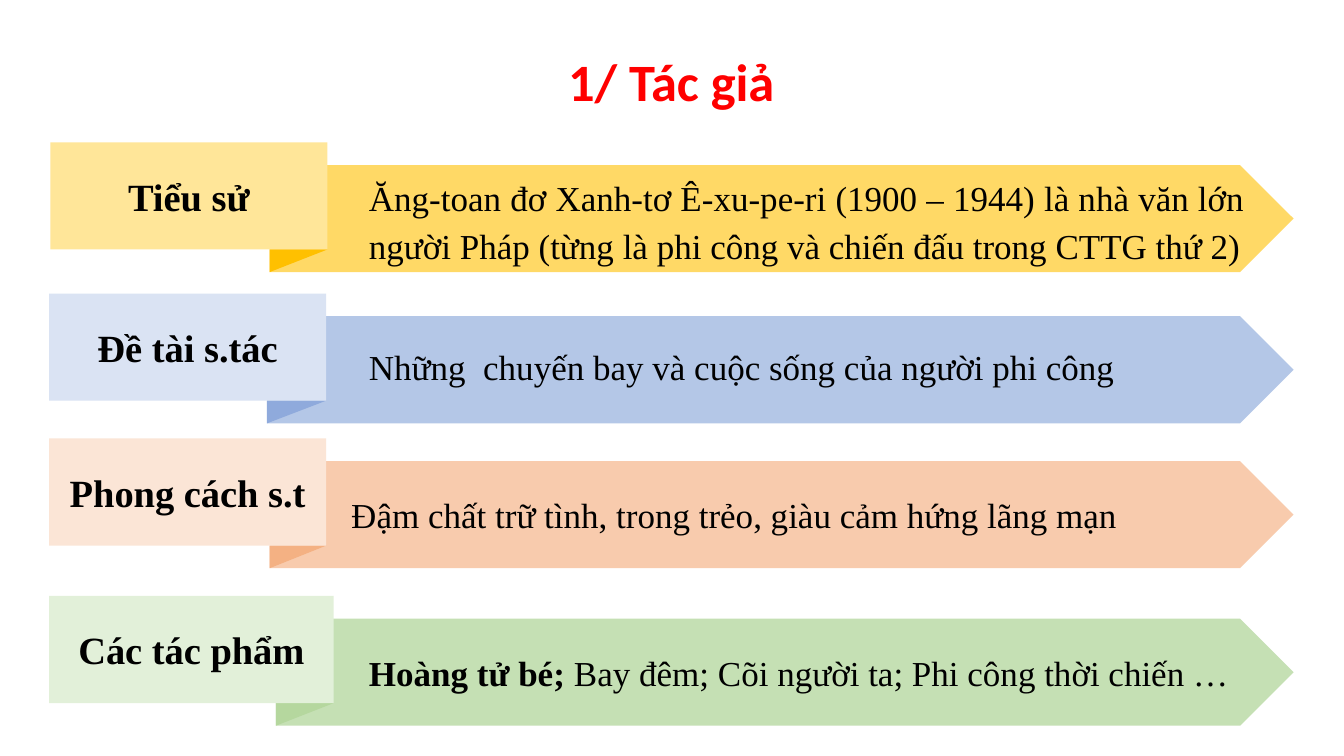
"""Build the slide about the author: a title and four labelled arrow bands."""
from pptx import Presentation
from pptx import util as u
from pptx.dml.color import RGBColor
from pptx.enum import shapes, text

SERIF = "Times New Roman"
TITLE = "1/ Tác giả"
ROWS = [
    dict(label="Tiểu sử", tab=(0.4, 1.13, 2.2), band_left=2.14,
         colors=("FFE699", "FFD966", "FFC000"), body=(2.83, 1.3, 7.15, 0.84), spacing=1.15,
         runs=[("Ăng-toan đơ Xanh-tơ Ê-xu-pe-ri (1900 – 1944) là nhà văn lớn người Pháp "
                "(từng là phi công và chiến đấu trong CTTG thứ 2)", False)]),
    dict(label="Đề tài s.tác", tab=(0.39, 2.33, 2.2), band_left=2.12,
         colors=("DAE3F3", "B4C7E7", "8FAADC"), body=(2.83, 2.69, 6.41, 0.44), spacing=1.0,
         runs=[("Những  chuyến bay và cuộc sống của người phi công", False)]),
    dict(label="Phong cách s.t", tab=(0.39, 3.48, 2.2), band_left=2.14,
         colors=("FBE5D6", "F8CBAD", "F4B183"), body=(2.69, 3.82, 7.29, 0.46), spacing=1.15,
         runs=[("Đậm chất trữ tình, trong trẻo, giàu cảm hứng lãng mạn", False)]),
    dict(label="Các tác phẩm", tab=(0.39, 4.73, 2.26), band_left=2.19,
         colors=("E2F0D9", "C5E0B4", "B5D79E"), body=(2.83, 5.07, 7.48, 0.46), spacing=1.15,
         runs=[("Hoàng tử bé; ", True), ("Bay đêm; Cõi người ta; Phi công thời chiến …", False)]),
]
BAND_RIGHT = 10.27
HEIGHT = 0.85
FOLD = 0.18


def inches(box):
    return [u.Inches(value) for value in box]


def add_block(slide, kind, box, color):
    shape = slide.shapes.add_shape(kind, *inches(box))
    shape.shadow.inherit = False
    shape.fill.solid()
    shape.fill.fore_color.rgb = RGBColor.from_string(color)
    shape.line.fill.background()
    return shape


def write(paragraph, runs, size, color="000000", font=SERIF, align=text.PP_ALIGN.CENTER):
    paragraph.alignment = align
    paragraph.font.size = u.Pt(size)
    paragraph.font.name = font
    paragraph.font.color.rgb = RGBColor.from_string(color)
    for words, bold in runs:
        run = paragraph.add_run()
        run.text = words
        run.font.bold = bold


def add_text(slide, box, runs, size, **style):
    frame = slide.shapes.add_textbox(*inches(box)).text_frame
    frame.word_wrap = True
    frame.auto_size = text.MSO_AUTO_SIZE.SHAPE_TO_FIT_TEXT
    write(frame.paragraphs[0], runs, size, **style)
    return frame.paragraphs[0]


def add_row(slide, row):
    left, top, width = row["tab"]
    band_left = row["band_left"]
    tab_color, band_color, fold_color = row["colors"]
    add_block(slide, shapes.MSO_SHAPE.PENTAGON,
              (band_left, top + FOLD, BAND_RIGHT - band_left, HEIGHT), band_color)
    fold = add_block(slide, shapes.MSO_SHAPE.RIGHT_TRIANGLE,
                     (band_left, top + HEIGHT, left + width - band_left, FOLD), fold_color)
    fold.rotation = 180
    fold._element.spPr.xfrm.set("flipH", "1")
    tab = add_block(slide, shapes.MSO_SHAPE.RECTANGLE, (left, top, width, HEIGHT), tab_color)
    frame = tab.text_frame
    frame.vertical_anchor = text.MSO_ANCHOR.MIDDLE
    frame.margin_left = frame.margin_right = u.Inches(0.14)
    frame.margin_top = frame.margin_bottom = u.Inches(0.14)
    write(frame.paragraphs[0], [(row["label"], True)], 22)
    body = add_text(slide, row["body"], row["runs"], 20, align=text.PP_ALIGN.JUSTIFY)
    body.line_spacing = row["spacing"]


def main():
    presentation = Presentation()
    presentation.slide_width, presentation.slide_height = inches((10.67, 6))
    slide = presentation.slides.add_slide(presentation.slide_layouts[6])
    for row in ROWS:
        add_row(slide, row)
    add_text(slide, (3.02, 0.34, 4.62, 0.61), [(TITLE, True)], 30, color="FF0000", font="Calibri")
    presentation.save("out.pptx")


if __name__ == "__main__":
    main()
